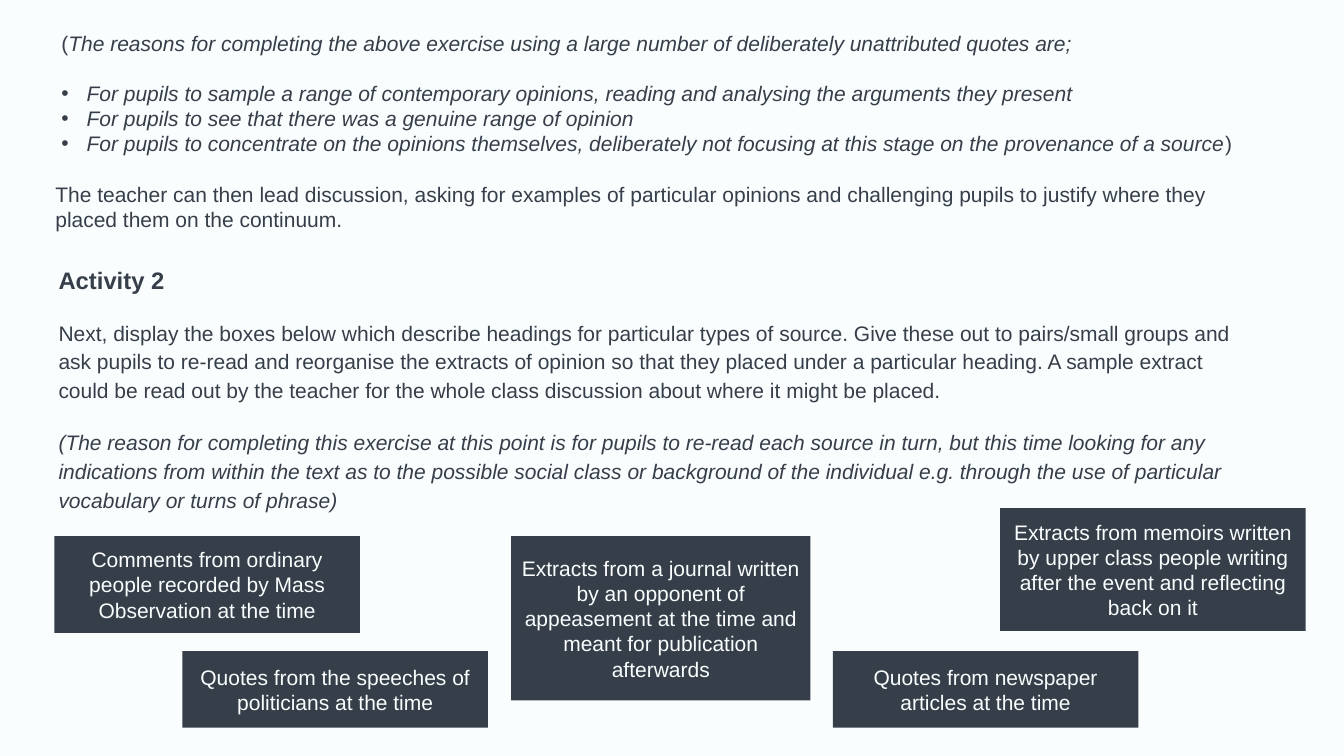
import pptx
import pptx.util
import pptx.dml.color
import pptx.enum.shapes
import pptx.enum.text
import pptx.oxml.ns
import lxml.etree

SLIDE_WIDTH = pptx.util.Inches(13.33)
SLIDE_HEIGHT = pptx.util.Inches(7.5)
COLUMN = SLIDE_WIDTH / 100
ROW = SLIDE_HEIGHT / 100
INK = "363F49"
PAPER = "FAFDFE"
BODY_SIZE = 15
BLANK_LINE = 18
BULLET_INDENT = 0.31
BULLET_HANG = -0.25

REASONS = [
    [("For pupils to sample a range of contemporary opinions, reading and analysing "
      "the arguments they present", True)],
    [("For pupils to see that there was a genuine range of opinion", True)],
    [("For pupils to concentrate on the opinions themselves, deliberately not focusing "
      "at this stage on the provenance of a source", True), (")", False)],
]

SOURCE_TYPES = [
    ("Comments from ordinary people recorded by Mass Observation at the time",
     (4.05, 70.93, 22.73, 12.8)),
    ("Quotes from the speeches of politicians at the time",
     (13.58, 86.13, 22.73, 10.13)),
    ("Extracts from a journal written by an opponent of appeasement at the time "
     "and meant for publication afterwards",
     (38.03, 70.93, 22.28, 21.73)),
    ("Quotes from newspaper articles at the time",
     (61.97, 86.13, 22.73, 10.13)),
    ("Extracts from memoirs written by upper class people writing after the event "
     "and reflecting back on it",
     (74.42, 67.2, 22.73, 16.27)),
]


def color(hex_code):
    return pptx.dml.color.RGBColor.from_string(hex_code)


def place(columns, rows, columns_wide, rows_high):
    return (round(columns * COLUMN), round(rows * ROW),
            round(columns_wide * COLUMN), round(rows_high * ROW))


def style(run, ink=INK, size=BODY_SIZE, bold=False, italic=False):
    run.font.name = "Arial"
    run.font.size = pptx.util.Pt(size)
    run.font.bold = bold
    run.font.italic = italic
    run.font.color.rgb = color(ink)


def add_text_area(slide, area, inset=None):
    frame = slide.shapes.add_textbox(*place(*area)).text_frame
    frame.word_wrap = True
    if inset is not None:
        frame.margin_left = frame.margin_right = pptx.util.Inches(inset)
        frame.margin_top = frame.margin_bottom = pptx.util.Inches(inset)
    return frame


def write(frame, parts, before=0, after=0, spacing=1.0, size=BODY_SIZE, bold=False):
    paragraph = frame.paragraphs[0]
    if paragraph.runs:
        paragraph = frame.add_paragraph()
    paragraph.space_before = pptx.util.Pt(before)
    paragraph.space_after = pptx.util.Pt(after)
    paragraph.line_spacing = spacing
    for wording, italic in parts:
        run = paragraph.add_run()
        run.text = wording
        style(run, size=size, bold=bold, italic=italic)
    return paragraph


def indent(paragraph, left, first=0):
    properties = paragraph._p.get_or_add_pPr()
    properties.set("marL", str(pptx.util.Inches(left)))
    properties.set("indent", str(pptx.util.Inches(first)))
    return properties


def add_bullet(paragraph):
    properties = indent(paragraph, BULLET_INDENT, BULLET_HANG)
    qn = pptx.oxml.ns.qn
    bullet_color = lxml.etree.SubElement(properties, qn("a:buClr"))
    lxml.etree.SubElement(bullet_color, qn("a:srgbClr")).set("val", INK)
    lxml.etree.SubElement(properties, qn("a:buFont")).set("typeface", "Arial")
    lxml.etree.SubElement(properties, qn("a:buChar")).set("char", "•")


def add_source_box(slide, heading, area):
    box = slide.shapes.add_shape(pptx.enum.shapes.MSO_SHAPE.RECTANGLE, *place(*area))
    box.shadow.inherit = False
    box.fill.solid()
    box.fill.fore_color.rgb = color(INK)
    box.line.fill.background()
    frame = box.text_frame
    frame.word_wrap = True
    frame.vertical_anchor = pptx.enum.text.MSO_ANCHOR.MIDDLE
    frame.text = heading
    paragraph = frame.paragraphs[0]
    paragraph.alignment = pptx.enum.text.PP_ALIGN.CENTER
    style(paragraph.runs[0], ink=PAPER)


def add_discussion(slide):
    discussion = add_text_area(slide, (3.38, 3.33, 89.27, 28.27))
    introduction = write(discussion, [
        ("(", False),
        ("The reasons for completing the above exercise using a large number of "
         "deliberately unattributed quotes are;", True)], after=BLANK_LINE)
    indent(introduction, 0.06)
    for reason in REASONS:
        add_bullet(write(discussion, reason))
    write(discussion, [
        ("The teacher can then lead discussion, asking for examples of particular "
         "opinions and challenging pupils to justify where they placed them on the "
         "continuum.", False)], before=BLANK_LINE)


def add_activity(slide):
    activity = add_text_area(slide, (3.38, 32.8, 89.27, 35.47), inset=0.13)
    write(activity, [("Activity 2", False)], spacing=1.15, size=17, bold=True)
    write(activity, [
        ("Next, display the boxes below which describe headings for particular types "
         "of source. Give these out to pairs/small groups and ask pupils to re-read and "
         "reorganise the extracts of opinion so that they placed under a particular "
         "heading. A sample extract could be read out by the teacher for the whole class "
         "discussion about where it might be placed.", False)], before=16, spacing=1.15)
    write(activity, [
        ("(The reason for completing this exercise at this point is for pupils to "
         "re-read each source in turn, but this time looking for any indications from "
         "within the text as to the possible social class or background of the "
         "individual e.g. through the use of particular vocabulary or turns of phrase)",
         True)], before=16, after=16, spacing=1.15)


def main():
    presentation = pptx.Presentation()
    presentation.slide_width = SLIDE_WIDTH
    presentation.slide_height = SLIDE_HEIGHT
    slide = presentation.slides.add_slide(presentation.slide_layouts[6])
    slide.background.fill.solid()
    slide.background.fill.fore_color.rgb = color(PAPER)
    add_discussion(slide)
    add_activity(slide)
    for heading, area in SOURCE_TYPES:
        add_source_box(slide, heading, area)
    presentation.save("out.pptx")


if __name__ == "__main__":
    main()
